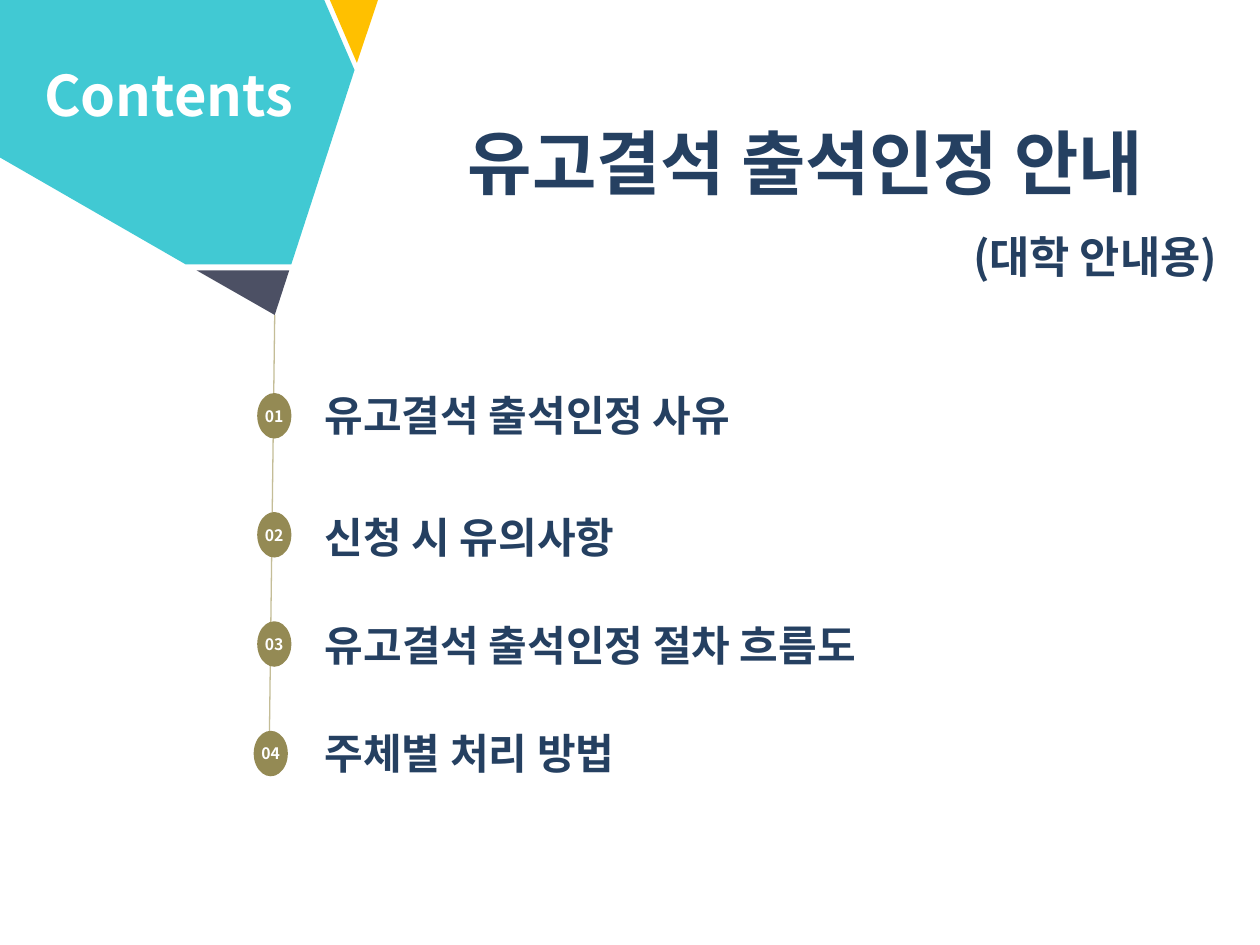
from lxml.etree import SubElement
from pptx import Presentation
from pptx.dml.color import RGBColor
from pptx.enum.shapes import MSO_CONNECTOR, MSO_SHAPE
from pptx.enum.text import MSO_ANCHOR, MSO_AUTO_SIZE, PP_ALIGN
from pptx.oxml.ns import qn
from pptx.util import Pt

TEAL = RGBColor(0x41, 0xC9, 0xD3)
AMBER = RGBColor(0xFF, 0xC0, 0x00)
SLATE = RGBColor(0x4C, 0x50, 0x64)
OLIVE = RGBColor(0x94, 0x8A, 0x54)
SAND = RGBColor(0xC4, 0xBD, 0x97)
NAVY = RGBColor(0x25, 0x40, 0x61)
WHITE = RGBColor(0xFF, 0xFF, 0xFF)
KOREAN = "Noto Sans CJK KR"
LATIN = "Arial"


def write(p, text, *, size, color, font=KOREAN, align=PP_ALIGN.LEFT, spacing=None):
    """Put one bold run of text in a paragraph."""
    p.alignment = align
    if spacing:
        p.line_spacing = spacing
    r = p.add_run()
    r.text = text
    r.font.size = Pt(size)
    r.font.bold = True
    r.font.name = font
    r.font.color.rgb = color
    SubElement(r.font._element, qn("a:ea")).set("typeface", KOREAN)


class Deck:
    """Holds the current slide and its style."""

    def __init__(self, width, height):
        self.prs = Presentation()
        self.prs.slide_width, self.prs.slide_height = Pt(width), Pt(height)
        self.s = self.prs.slides.add_slide(self.prs.slide_layouts[6])

    def line(self, x1, y1, x2, y2, color):
        sp = self.s.shapes.add_connector(
            MSO_CONNECTOR.STRAIGHT, Pt(x1), Pt(y1), Pt(x2), Pt(y2))
        sp.line.color.rgb = color
        sp.line.width = Pt(0.75)
        SubElement(sp._element.spPr, qn("a:effectLst"))

    def paint(self, sp, color):
        sp.shadow.inherit = False
        sp.fill.solid()
        sp.fill.fore_color.rgb = color
        sp.line.fill.background()

    def polygon(self, points, color):
        start, *rest = [(Pt(x), Pt(y)) for x, y in points]
        builder = self.s.shapes.build_freeform(*start)
        builder.add_line_segments(rest, close=True)
        self.paint(builder.convert_to_shape(), color)

    def badge(self, x, y, text):
        sp = self.s.shapes.add_shape(
            MSO_SHAPE.OVAL, Pt(x), Pt(y), Pt(19.5), Pt(26))
        self.paint(sp, OLIVE)
        tf = sp.text_frame
        tf.margin_left = tf.margin_right = tf.margin_top = tf.margin_bottom = 0
        tf.vertical_anchor = MSO_ANCHOR.MIDDLE
        write(tf.paragraphs[0], text, size=9, color=WHITE, align=PP_ALIGN.CENTER)

    def text(self, x, y, w, h, *lines, grow=True):
        """Add a text box; each line is (text, format)."""
        tf = self.s.shapes.add_textbox(Pt(x), Pt(y), Pt(w), Pt(h)).text_frame
        tf.word_wrap = True
        tf.auto_size = MSO_AUTO_SIZE.SHAPE_TO_FIT_TEXT if grow else MSO_AUTO_SIZE.NONE
        for i, (text, style) in enumerate(lines):
            p = tf.add_paragraph() if i else tf.paragraphs[0]
            write(p, text, **style)


def main():
    deck = Deck(720, 540)

    # Timeline behind the badges
    deck.line(157, 180, 154, 417.6, SAND)

    # Corner decoration
    deck.polygon([(188.5, 0), (216, 0), (204, 36)], AMBER)
    deck.polygon([(0, 0), (185.3, 0), (202.6, 40), (166.5, 151), (106, 151), (0, 90)], TEAL)
    deck.polygon([(112.3, 154.5), (165.3, 154.5), (157, 180)], SLATE)
    deck.text(3, 31, 187, 46,
              ("Contents", dict(size=32, color=WHITE, align=PP_ALIGN.CENTER)))

    # Title and subtitle
    deck.text(218, 41, 484.5, 132.5,
              ("유고결석 출석인정 안내",
               dict(size=40, color=NAVY, align=PP_ALIGN.CENTER, spacing=1.5)),
              ("(대학 안내용)",
               dict(size=25, color=NAVY, align=PP_ALIGN.RIGHT, spacing=1.5)),
              grow=False)

    # Numbered contents: badge left and top, text top and width
    items = [
        ("유고결석 출석인정 사유", 147, 224.6, 219, 357),
        ("신청 시 유의사항", 147, 292.6, 289, 516),
        ("유고결석 출석인정 절차 흐름도", 147, 355, 350.6, 516),
        ("주체별 처리 방법", 145, 417.6, 412, 476),
    ]
    for n, (label, x, badge_y, text_y, w) in enumerate(items, 1):
        deck.badge(x, badge_y, f"{n:02d}")
        deck.text(178.5, text_y, w, 36, (label, dict(size=24, color=NAVY, font=LATIN)))

    deck.prs.save("out.pptx")


if __name__ == "__main__":
    main()
